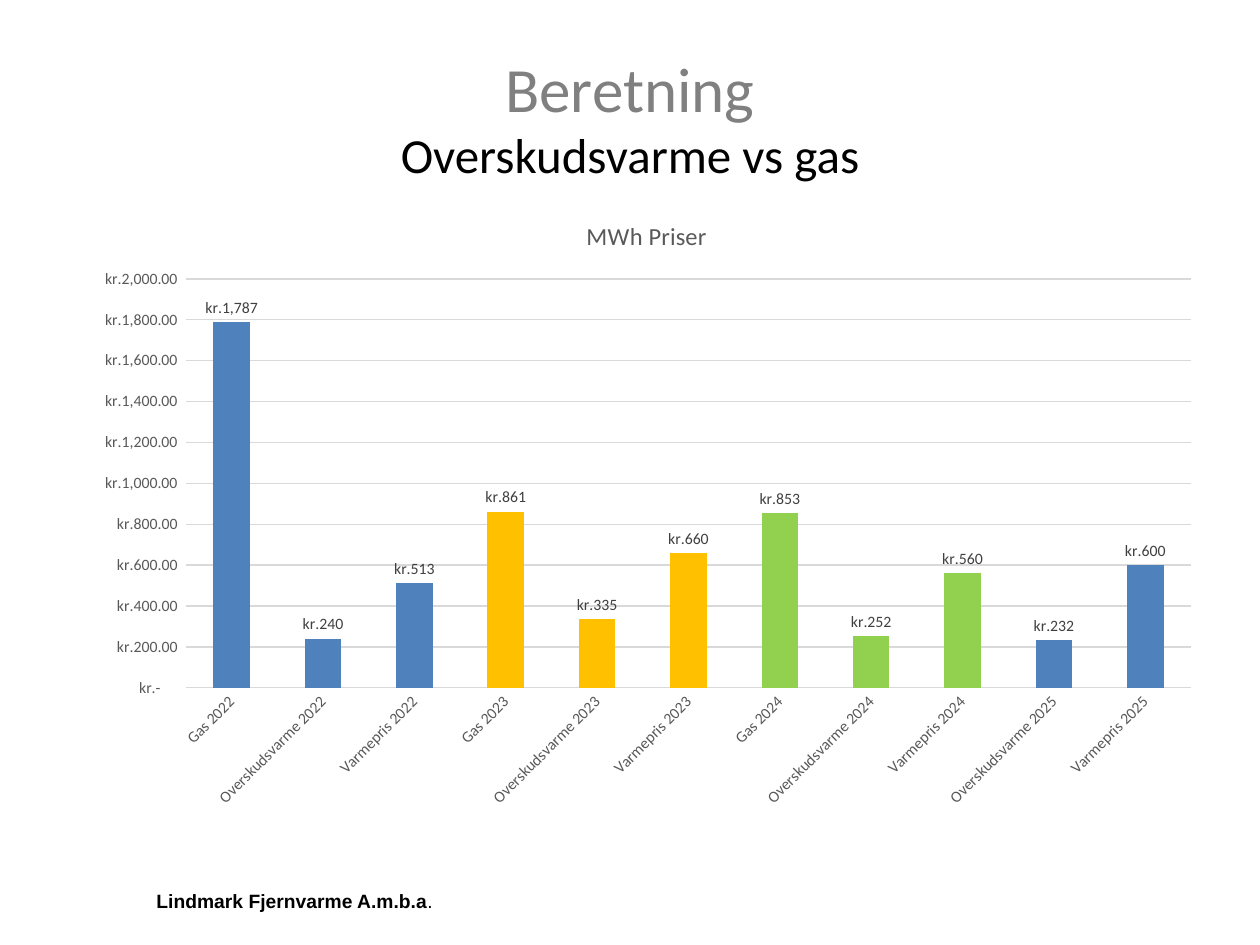
"""Build a slide with a column chart comparing surplus heat and gas prices."""
from lxml.etree import SubElement
from pptx import Presentation
from pptx.chart.data import CategoryChartData
from pptx.dml.color import RGBColor
from pptx.enum.chart import XL_CHART_TYPE as ChartType, XL_LABEL_POSITION as LabelPosition
from pptx.enum.chart import XL_TICK_MARK as TickMark
from pptx.enum.text import MSO_ANCHOR as Anchor, PP_ALIGN as Align
from pptx.oxml.ns import qn
from pptx.util import Inches, Pt

PX = 914400 // 126
AXIS_FORMAT = '_("kr."* #,##0.00_);_("kr."* \\(#,##0.00\\);_("kr."* "-"??_);_(@_)'
LABEL_FORMAT = '_("kr."* #,##0_);_("kr."* \\(#,##0\\);_("kr."* "-"??_);_(@_)'


def color(value):
    return RGBColor.from_string(value)


def write(para, text, font="Calibri", size=11, fill="000000", bold=False):
    span = para.add_run()
    span.text = text
    span.font.name, span.font.size, span.font.bold = font, Pt(size), bold
    span.font.color.rgb = color(fill)


deck = Presentation()
deck.slide_width, deck.slide_height = Inches(10), Inches(7.5)
page = deck.slides.add_slide(deck.slide_layouts[6])

footer = page.shapes.add_textbox(144 * PX, 883 * PX, 446 * PX, 36 * PX)
footer.text_frame.word_wrap = True
para = footer.text_frame.paragraphs[0]
write(para, "Lindmark Fjernvarme A.m.b.a", font="Arial", bold=True)
write(para, ".", font="Arial")

heading = page.shapes.add_textbox(63 * PX, 38 * PX, 1134 * PX, 157 * PX)
heading.text_frame.word_wrap = True
heading.text_frame.vertical_anchor = Anchor.MIDDLE
para = heading.text_frame.paragraphs[0]
para.alignment = Align.CENTER
write(para, "Beretning", size=36, fill="808080")
para.add_line_break()
write(para, "Overskudsvarme vs gas", size=28)

prices = {
    "Gas 2022": 1787, "Overskudsvarme 2022": 240, "Varmepris 2022": 513,
    "Gas 2023": 861, "Overskudsvarme 2023": 335, "Varmepris 2023": 660,
    "Gas 2024": 853, "Overskudsvarme 2024": 252, "Varmepris 2024": 560,
    "Overskudsvarme 2025": 232, "Varmepris 2025": 600,
}
year_fills = {"2022": "4F81BD", "2023": "FFC000", "2024": "92D050", "2025": "4F81BD"}
data = CategoryChartData(number_format=LABEL_FORMAT)
data.categories = list(prices)
data.add_series("Series 1", list(prices.values()))
left, top, width, height = 79, 195, 1134, 624
chart = page.shapes.add_chart(
    ChartType.COLUMN_CLUSTERED, left * PX, top * PX, width * PX, height * PX, data
).chart
chart.has_legend = False
chart.font.name, chart.font.size = "Calibri", Pt(10)
chart.has_title = True
chart.chart_title.include_in_layout = False
write(chart.chart_title.text_frame.paragraphs[0], "MWh Priser", size=14, fill="595959")

plot = chart.plots[0]
plot.gap_width = 150
plot.vary_by_categories = False
series = plot.series[0]
series.format.fill.solid()
series.format.fill.fore_color.rgb = color("4F81BD")
for index, category in enumerate(prices):
    fill = year_fills[category[-4:]]
    if fill != "4F81BD":
        point = series.points[index].format.fill
        point.solid()
        point.fore_color.rgb = color(fill)

labels = series.data_labels
labels.show_value = True
labels.position = LabelPosition.OUTSIDE_END
labels.number_format, labels.number_format_is_linked = LABEL_FORMAT, False
prices_axis, names_axis = chart.value_axis, chart.category_axis
for axis in (prices_axis, names_axis):
    axis.major_tick_mark = axis.minor_tick_mark = TickMark.NONE
    axis.format.line.fill.background()
for font, fill in (
    (labels.font, "404040"),
    (prices_axis.tick_labels.font, "595959"),
    (names_axis.tick_labels.font, "595959"),
):
    font.name, font.size = "Calibri", Pt(9)
    font.color.rgb = color(fill)

prices_axis.minimum_scale, prices_axis.maximum_scale, prices_axis.major_unit = 0, 2000, 200
prices_axis.tick_labels.number_format = AXIS_FORMAT
prices_axis.tick_labels.number_format_is_linked = False
grid = prices_axis.major_gridlines.format.line
grid.width = Pt(0.75)
grid.color.rgb = color("D9D9D9")
names_axis._element.find(qn("c:txPr")).find(qn("a:bodyPr")).set("rot", "-2700000")

title_node = chart.chart_title._element
plot_node = title_node.getparent().find(qn("c:plotArea"))
for node, order, settings in (
    (title_node, 1, {"xMode": "edge", "yMode": "edge",
                     "x": (582 - left) / width, "y": (214 - top) / height}),
    (plot_node, 0, {"layoutTarget": "inner", "xMode": "edge", "yMode": "edge",
                    "x": (186 - left) / width, "y": (279 - top) / height,
                    "w": 1005 / width, "h": 409 / height}),
):
    for old in node.findall(qn("c:layout")):
        node.remove(old)
    layout = SubElement(node, qn("c:layout"))
    node.insert(order, layout)
    manual = SubElement(layout, qn("c:manualLayout"))
    for tag, value in settings.items():
        SubElement(manual, qn(f"c:{tag}")).set("val", str(value))

deck.save("out.pptx")
